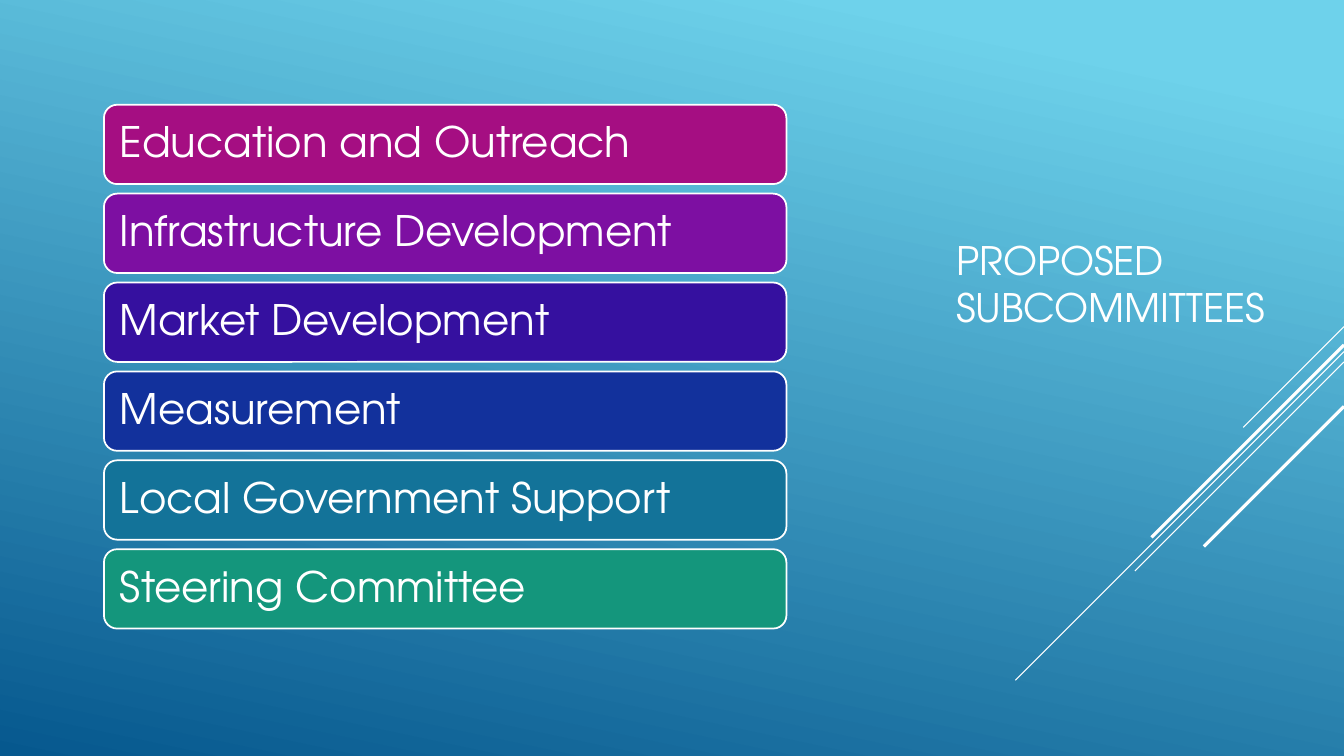
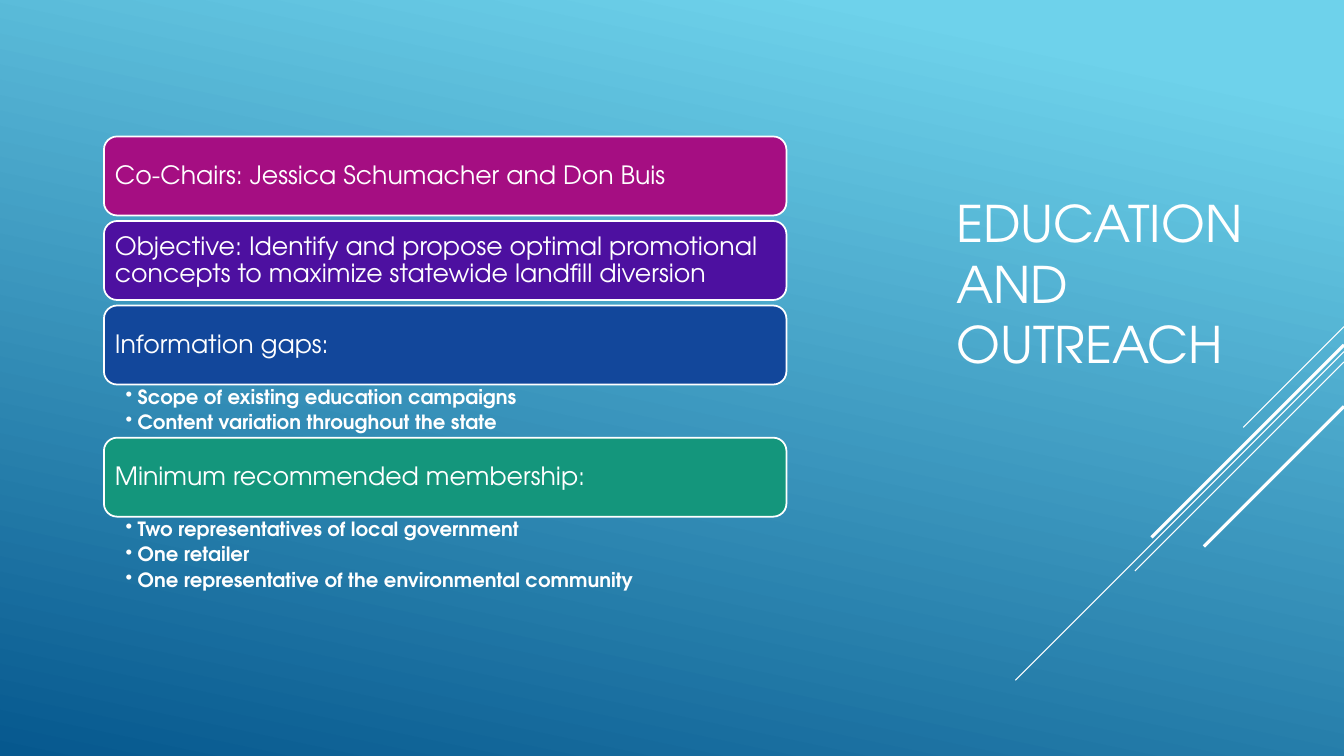
"""Builds two slides on proposed subcommittees as stacks of coloured bars."""
import pptx
import pptx.dml.color
import pptx.enum.shapes
import pptx.enum.text
import pptx.oxml.ns
import pptx.util
from lxml import etree

Cm = pptx.util.Cm
Pt = pptx.util.Pt
RGBColor = pptx.dml.color.RGBColor
Anchor = pptx.enum.text.MSO_ANCHOR

FONT = "TeX Gyre Adventor"
WHITE = RGBColor(0xFF, 0xFF, 0xFF)
SKY = RGBColor(0x6E, 0xD2, 0xEB)
OCEAN = RGBColor(0x06, 0x58, 0x8E)
MAGENTA = RGBColor(0xA5, 0x0E, 0x82)
PURPLE = RGBColor(0x7D, 0x0F, 0xA2)
VIOLET = RGBColor(0x4D, 0x10, 0xA0)
INDIGO = RGBColor(0x35, 0x10, 0x9F)
NAVY = RGBColor(0x12, 0x31, 0x9C)
BLUE = RGBColor(0x12, 0x47, 0x9B)
TEAL = RGBColor(0x13, 0x73, 0x99)
GREEN = RGBColor(0x14, 0x96, 0x7C)

SLIDE_WIDTH, SLIDE_HEIGHT = 33.87, 19.05
STACK_LEFT, STACK_WIDTH = 2.62, 17.2
BULLET_PITCH = 0.67
RAYS = [
    (8.23, 2.54, 0.75),
    (8.86, 8.28, 0.75),
    (9.12, 5.27, 0.75),
    (8.69, 4.85, 2.25),
    (10.24, 3.53, 2.25),
]

SUBCOMMITTEES = [
    ("Education and Outreach", MAGENTA, []),
    ("Infrastructure Development", PURPLE, []),
    ("Market Development", INDIGO, []),
    ("Measurement", NAVY, []),
    ("Local Government Support", TEAL, []),
    ("Steering Committee", GREEN, []),
]
OUTREACH = [
    ("Co-Chairs: Jessica Schumacher and Don Buis", MAGENTA, []),
    ("Objective: Identify and propose optimal promotional concepts "
     "to maximize statewide landfill diversion", VIOLET, []),
    ("Information gaps:", BLUE, [
        "Scope of existing education campaigns",
        "Content variation throughout the state",
    ]),
    ("Minimum recommended membership:", GREEN, [
        "Two representatives of local government",
        "One retailer",
        "One representative of the environmental community",
    ]),
]


def write(frame, lines, size, bold=False, anchor=Anchor.MIDDLE,
          insets=(0.25, 0.13, 0.25, 0.13), line_spacing=0.9, space_after=0,
          bulleted=False):
    """Fill a text frame with one formatted paragraph per line."""
    frame.word_wrap = True
    frame.auto_size = pptx.enum.text.MSO_AUTO_SIZE.NONE
    frame.vertical_anchor = anchor
    (frame.margin_left, frame.margin_top,
     frame.margin_right, frame.margin_bottom) = map(Cm, insets)
    for index, line in enumerate(lines):
        paragraph = frame.add_paragraph() if index else frame.paragraphs[0]
        paragraph.alignment = pptx.enum.text.PP_ALIGN.LEFT
        paragraph.line_spacing = line_spacing
        paragraph.space_after = Pt(space_after)
        run = paragraph.add_run()
        run.text = line
        run.font.name = FONT
        run.font.size = Pt(size)
        run.font.bold = bold
        run.font.color.rgb = WHITE
        if bulleted:
            add_bullet(paragraph)


def add_bullet(paragraph):
    """Give a paragraph a round bullet with a hanging indent."""
    properties = paragraph._p.get_or_add_pPr()
    properties.set("marL", str(Cm(0.3)))
    properties.set("indent", str(Cm(-0.3)))
    bullet = etree.SubElement(properties, pptx.oxml.ns.qn("a:buChar"))
    bullet.set("char", "•")


def paint_background(master):
    """Set the shared sky-to-ocean gradient on the slide master."""
    fill = master.background.fill
    fill.gradient()
    fill.gradient_angle = 258
    for stop, position, color in zip(fill.gradient_stops, (0.1, 1), (SKY, OCEAN)):
        stop.position = position
        stop.color.rgb = color


def add_ray(slide, top, reach, weight):
    """Draw a diagonal line running down and left from the right edge."""
    ray = slide.shapes.add_connector(
        pptx.enum.shapes.MSO_CONNECTOR.STRAIGHT,
        Cm(SLIDE_WIDTH), Cm(top), Cm(SLIDE_WIDTH - reach), Cm(top + reach))
    ray.line.color.rgb = WHITE
    ray.line.width = Pt(weight)
    etree.SubElement(ray._element.spPr, pptx.oxml.ns.qn("a:effectLst"))


def add_titled_slide(deck, heading, size):
    """Add a slide with the diagonal rays and its title at the right."""
    slide = deck.slides.add_slide(deck.slide_layouts[5])
    for ray in RAYS:
        add_ray(slide, *ray)
    title = slide.shapes.title
    title.left, title.top, title.width, title.height = map(
        Cm, (23.85, 2.62, 8.46, 9.02))
    write(title.text_frame, [heading], size, line_spacing=1.0)
    return slide


def add_bar(slide, label, color, top, height, size, inset):
    """Add one rounded bar with its label."""
    bar = slide.shapes.add_shape(
        pptx.enum.shapes.MSO_SHAPE.ROUNDED_RECTANGLE,
        Cm(STACK_LEFT), Cm(top), Cm(STACK_WIDTH), Cm(height))
    bar.shadow.inherit = False
    bar.fill.solid()
    bar.fill.fore_color.rgb = color
    bar.line.color.rgb = WHITE
    bar.line.width = Pt(1.25)
    write(bar.text_frame, [label], size, insets=(inset,) * 4)


def add_bullets(slide, points, top, height):
    """Add the bulleted list that follows a bar."""
    details = slide.shapes.add_textbox(
        Cm(STACK_LEFT), Cm(top), Cm(STACK_WIDTH), Cm(height))
    write(details.text_frame, points, 14, bold=True, anchor=Anchor.TOP,
          insets=(0.55, 0.08, 0.36, 0.08), space_after=2.8, bulleted=True)


def add_stack(slide, entries, top, height, gap, size, inset):
    """Stack bars downwards, with a list or a gap after each."""
    for label, color, points in entries:
        add_bar(slide, label, color, top, height, size, inset)
        top += height
        if points:
            depth = BULLET_PITCH * len(points)
            add_bullets(slide, points, top, depth)
            top += depth
        else:
            top += gap


def main():
    """Build and save the deck."""
    deck = pptx.Presentation()
    deck.slide_width, deck.slide_height = Cm(SLIDE_WIDTH), Cm(SLIDE_HEIGHT)
    paint_background(deck.slide_master)
    overview = add_titled_slide(deck, "PROPOSED SUBCOMMITTEES", 28)
    add_stack(overview, SUBCOMMITTEES, top=2.64, height=2, gap=0.24,
              size=30, inset=0.3)
    outreach = add_titled_slide(deck, "EDUCATION AND OUTREACH", 36)
    add_stack(outreach, OUTREACH, top=3.44, height=1.99, gap=0.14,
              size=18, inset=0.18)
    deck.save("out.pptx")


if __name__ == "__main__":
    main()
